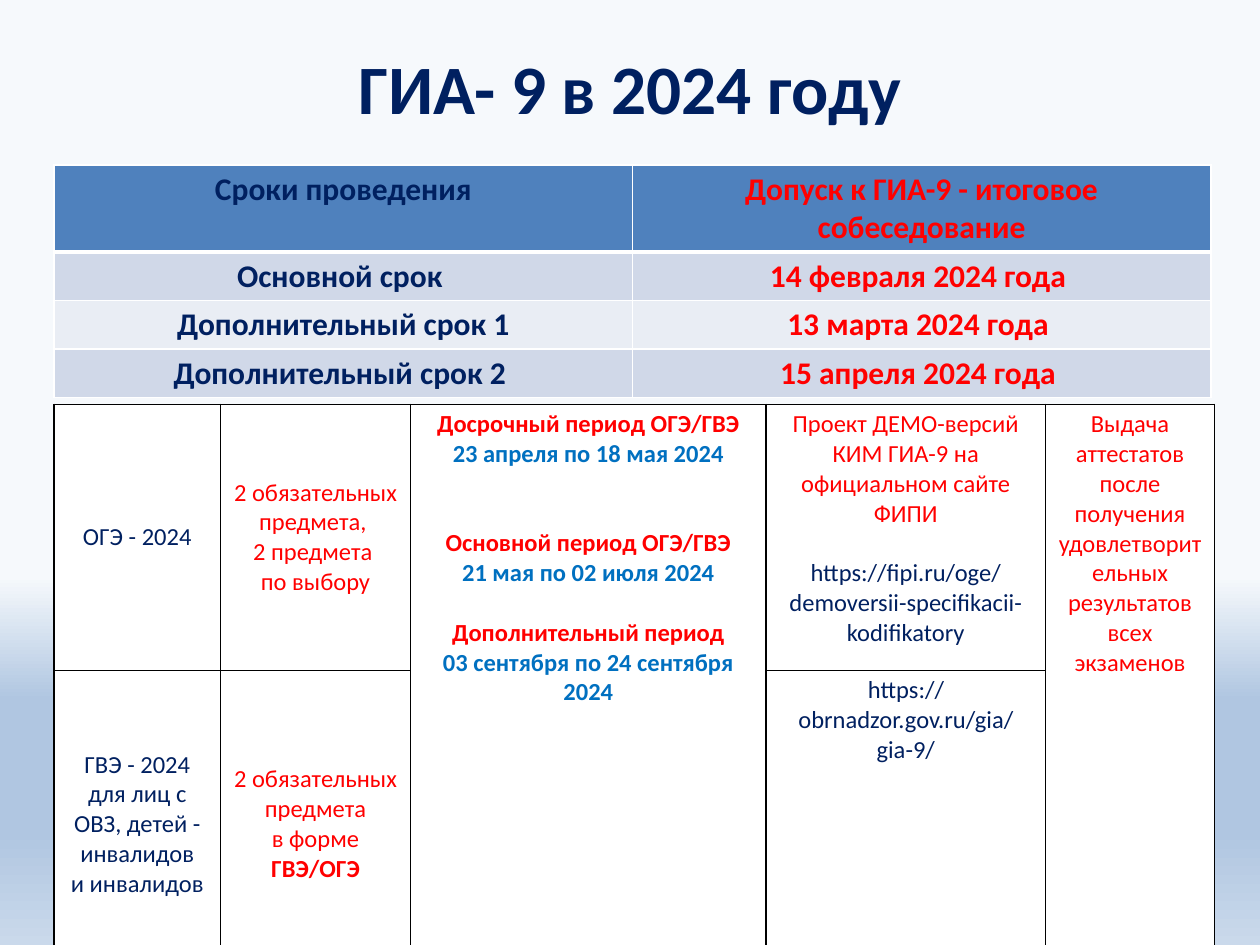
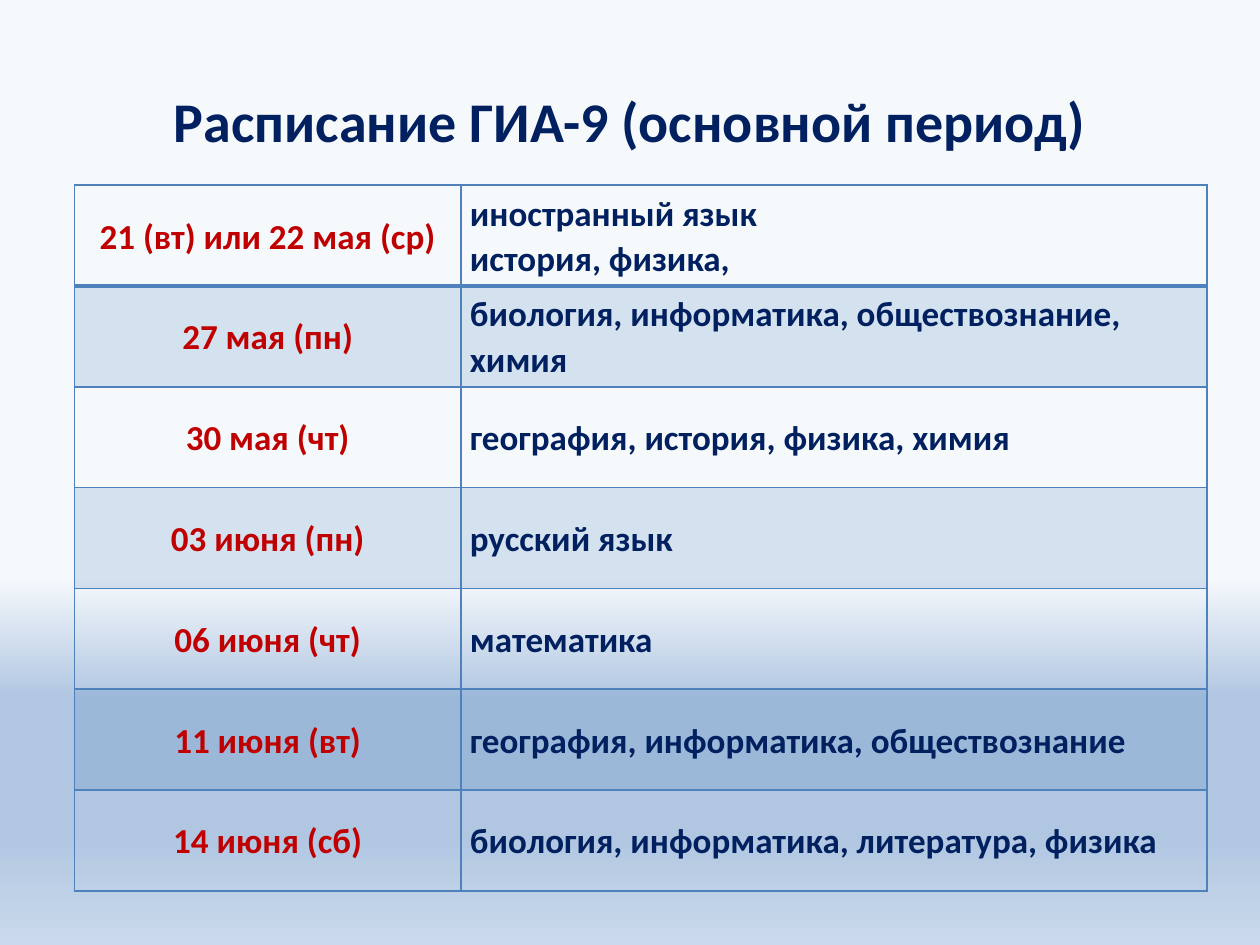
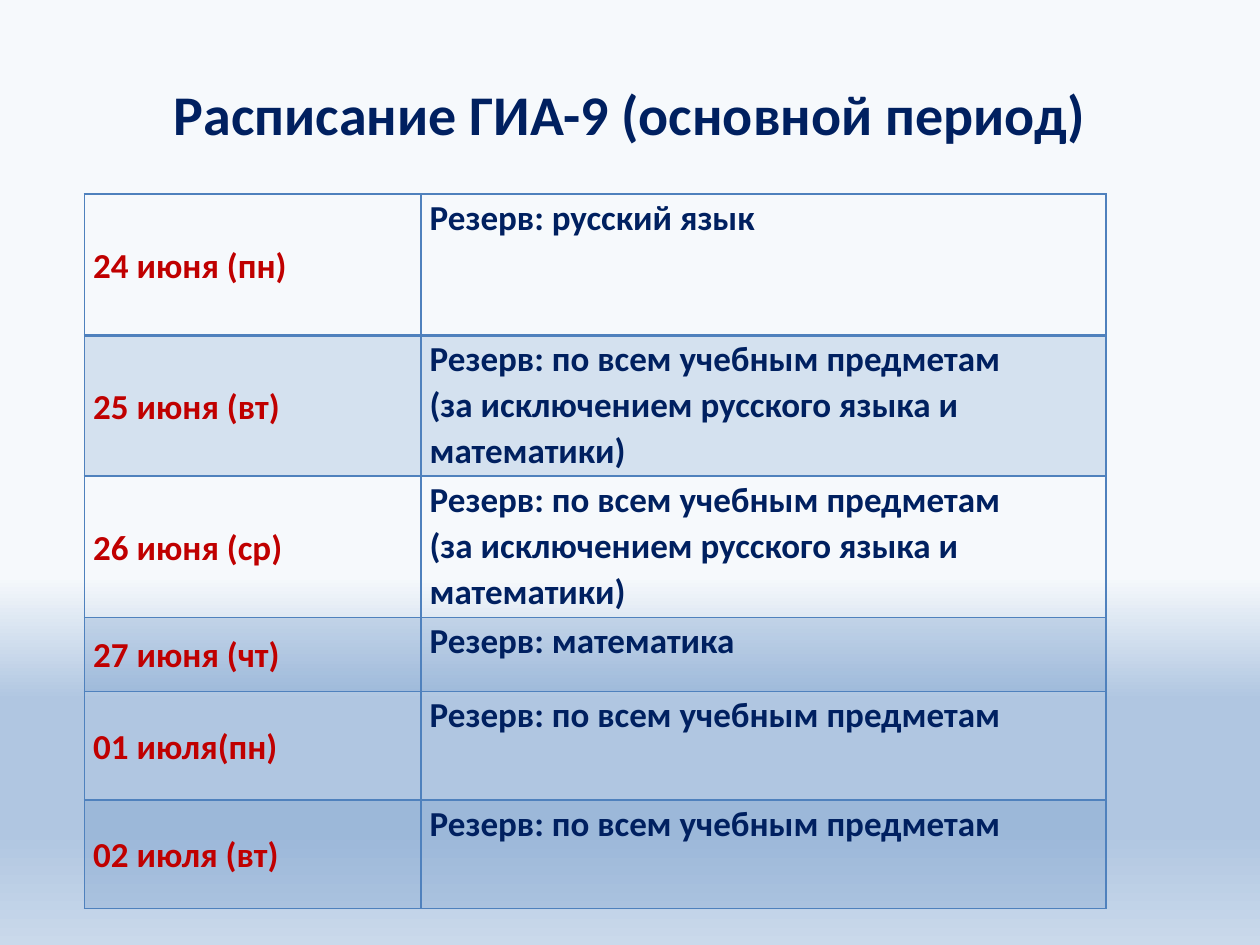
"""Build three slides on the 2024 exam dates: key terms and the main timetable."""
from lxml import etree
from pptx import Presentation
from pptx.dml.color import RGBColor
from pptx.enum.text import MSO_ANCHOR, PP_ALIGN
from pptx.oxml.ns import qn
from pptx.util import Inches, Pt

LEFT, MID = PP_ALIGN.LEFT, PP_ALIGN.CENTER
TOP, HALF = MSO_ANCHOR.TOP, MSO_ANCHOR.MIDDLE
NAVY, RED, WINE, SKY = "002060", "FF0000", "C00000", "0070C0"
BLUE, WHITE, BLACK = "4F81BD", "FFFFFF", "000000"
FONT = "Calibri"
LINE = 17
rgb = RGBColor.from_string


def write(frame, paras, size, align, space=1.0):
    """Fill a text frame; a paragraph is (gap before, runs of (text, colour, bold))."""
    for i, (gap, runs) in enumerate(paras):
        para = frame.paragraphs[0] if i == 0 else frame.add_paragraph()
        para.alignment = align
        para.line_spacing = space
        para.space_before = Pt(gap)
        for text, hue, bold in runs:
            run = para.add_run()
            run.text = text
            run.font.name, run.font.size, run.font.bold = FONT, Pt(size), bold
            run.font.color.rgb = rgb(hue)


def grid(slide, left, top, cols, rows, cells, look):
    """Add a table; a cell is (paragraphs, alignment, anchor, fill) or None if merged."""
    frame = slide.shapes.add_table(len(rows), len(cols), Inches(left), Inches(top),
                                   Inches(sum(cols)), Inches(sum(rows)))
    table = frame.table
    table.first_row = table.horz_banding = False
    for col, width in zip(table.columns, cols):
        col.width = Inches(width)
    for r, line in enumerate(cells):
        table.rows[r].height = Inches(rows[r])
        for c, item in enumerate(line):
            cell = table.cell(r, c)
            props = cell._tc.get_or_add_tcPr()
            for side in "LRTB":
                thick = (r, side) in ((0, "B"), (1, "T"))
                edge = etree.SubElement(props, qn("a:ln" + side),
                                        w=str(Pt(look["head"] if thick else 1)))
                solid = etree.SubElement(edge, qn("a:solidFill"))
                etree.SubElement(solid, qn("a:srgbClr"), val=look["edge"])
            if item is None:
                continue
            paras, align, anchor, fill = item
            cell.margin_left = cell.margin_right = Inches(look["side"])
            cell.margin_top = cell.margin_bottom = Inches(look["pad"])
            cell.vertical_anchor = anchor
            write(cell.text_frame, paras, look["size"], align, look["space"])
            if fill:
                cell.fill.solid()
                cell.fill.fore_color.rgb = rgb(fill)
                if look["alpha"] < 100:
                    shade = props.find(qn("a:solidFill") + "/" + qn("a:srgbClr"))
                    etree.SubElement(shade, qn("a:alpha"), val=str(look["alpha"] * 1000))
            else:
                cell.fill.background()
    return table


prs = Presentation()
prs.slide_width, prs.slide_height = Inches(10), Inches(7.5)

master = prs.slide_master
back = master.background.fill
back.gradient()
back.gradient_angle = 270
stops = master.element.find(".//" + qn("a:gsLst"))
for stop in list(stops):
    stops.remove(stop)
for pos, hue in ((61, "F6F9FC"), (74, "B0C6E1"), (88, "B0C6E1"), (100, "CAD9EB")):
    stop = etree.SubElement(stops, qn("a:gs"), pos=str(pos * 1000))
    etree.SubElement(stop, qn("a:srgbClr"), val=hue)

PLAN = "Расписание ГИА-9 (основной период)"
slides = []
for text, top, height, size in (("ГИА- 9 в 2024 году", 0.3, 0.77, 39.6),
                                (PLAN, 0.44, 1.02, 32),
                                (PLAN, 0.63, 0.54, 32)):
    slide = prs.slides.add_slide(prs.slide_layouts[5])
    title = slide.shapes.title
    title.left, title.top = Inches(0.5), Inches(top)
    title.width, title.height = Inches(9), Inches(height)
    title.text_frame.vertical_anchor = HALF
    write(title.text_frame, [(0, [(text, NAVY, True)])], size, MID)
    slides.append(slide)
first, second, third = slides

terms = [
    ("Сроки проведения", "Допуск к ГИА-9 - итоговое собеседование"),
    ("Основной срок ", "14 февраля 2024 года "),
    ("Дополнительный срок 1", "13 марта 2024 года "),
    ("Дополнительный срок 2 ", "15 апреля 2024 года "),
]
bands = (BLUE, "D0D8E8", "E9EDF4", "D0D8E8")
cells = [[([(0, [(term, NAVY, True)])], MID, TOP, band),
          ([(0, [(date, RED, True)])], MID, HALF, band)]
         for (term, date), band in zip(terms, bands)]
look = dict(size=18, edge=WHITE, head=3, side=0.09, pad=0.04, space=1.0, alpha=100)
grid(first, 0.43, 1.31, [4.59] * 2, [0.39] + [0.31] * 3, cells, look)

oge = [(0, [("ОГЭ - 2024", NAVY, False)])]
gve = [(0, [(text, NAVY, False)]) for text in
       ("ГВЭ - 2024", "для лиц с ОВЗ, детей - инвалидов", "и инвалидов")]
four = [(0, [(text, RED, False)]) for text in
        ("2 обязательных предмета, ", "2 предмета ", "по выбору")]
two = [(0, [("2 обязательных предмета", RED, False)]),
       (0, [("в форме ", RED, False), ("ГВЭ/ОГЭ", RED, True)])]
dates = []
for gap, name, span in ((0, "Досрочный период ОГЭ/ГВЭ", "23 апреля по 18 мая 2024"),
                        (2, "Основной период ОГЭ/ГВЭ", "21 мая по 02 июля 2024"),
                        (1, "Дополнительный период", "03 сентября по 24 сентября 2024")):
    dates += [(gap * LINE, [(name, RED, True)]), (0, [(span, SKY, True)])]
demo = [(0, [("Проект ДЕМО-версий КИМ ГИА-9 на официальном сайте ФИПИ", RED, False)]),
        (LINE, [("https://fipi.ru/oge/demoversii-specifikacii-kodifikatory", NAVY, False)])]
site = [(0, [("https://obrnadzor.gov.ru/gia/gia-9/", NAVY, False)])]
award = [(0, [("Выдача аттестатов после получения удовлетворительных "
               "результатов всех экзаменов", RED, False)])]
anchors = (HALF, HALF, TOP, TOP, TOP)
cells = [[paras and (paras, MID, anchor, WHITE) for paras, anchor in zip(line, anchors)]
         for line in ((oge, four, dates, demo, award), (gve, two, None, site, None))]
look = dict(look, size=14, edge=BLACK, head=1)
table = grid(first, 0.43, 3.21, [1.32, 1.51, 2.82, 2.22, 1.34], [2.11, 1.97], cells, look)
for c in (2, 4):
    table.cell(0, c).merge(table.cell(1, c))

ALL = "Резерв: по всем учебным предметам"
BUT = "(за исключением русского языка и математики)"
exams = [
    ("21 (вт) или 22 мая (ср)", ["иностранный язык", "история, физика,"]),
    ("27 мая (пн)", ["биология, информатика, обществознание, химия"]),
    ("30 мая (чт)", ["география, история, физика, химия"]),
    ("03 июня (пн)", ["русский язык"]),
    ("06 июня (чт)", ["математика"]),
    ("11 июня (вт)", ["география, информатика, обществознание"]),
    ("14 июня (сб)", ["биология, информатика, литература, физика"]),
]
spare = [
    ("24 июня (пн)", ["Резерв: русский язык"]),
    ("25 июня (вт)", [ALL, BUT]),
    ("26 июня (ср)", [ALL, BUT]),
    ("27 июня (чт)", ["Резерв: математика"]),
    ("01 июля(пн)", [ALL]),
    ("02 июля (вт)", [ALL]),
]
look = dict(size=20, edge=BLUE, head=2, side=0.07, pad=0, space=1.07, alpha=20)
for slide, left, top, cols, rows, days, align, anchor in (
        (second, 0.59, 1.47, [3.07, 5.92], [0.8] * 7, exams, MID, HALF),
        (third, 0.67, 1.54, [2.67, 5.44], [1.12] * 3 + [0.59] + [0.86] * 2,
         spare, LEFT, TOP)):
    cells = []
    for i, (day, lines) in enumerate(days):
        band = BLUE if i % 2 else None
        cells.append([([(0, [(day, WINE, True)])], align, HALF, band),
                      ([(0, [(text, NAVY, True)]) for text in lines], LEFT, anchor, band)])
    grid(slide, left, top, cols, rows, cells, look)

prs.save("out.pptx")
